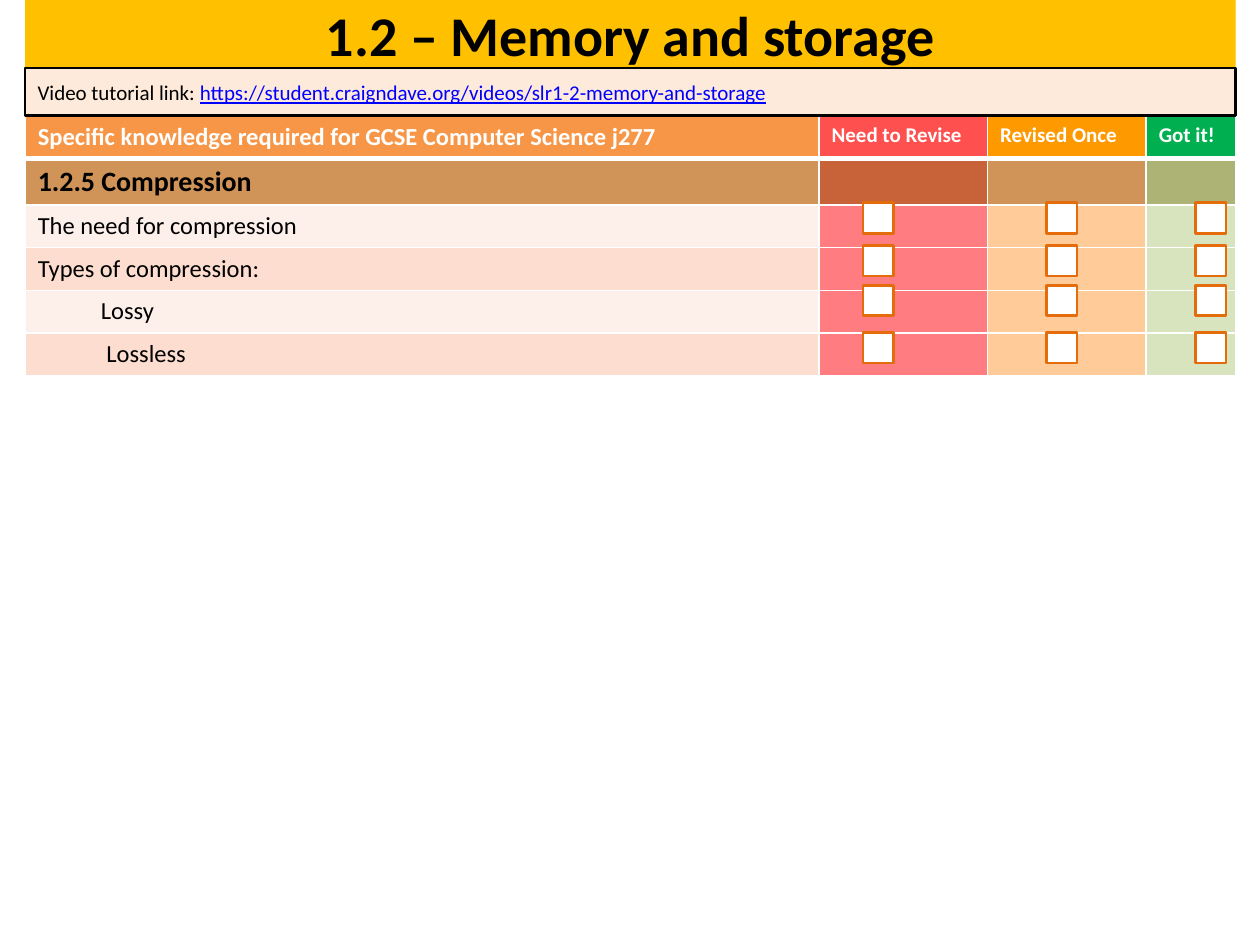
from dataclasses import dataclass

from lxml import etree
from pptx import Presentation
from pptx.dml.color import RGBColor
from pptx.enum import shapes, text
from pptx.oxml import ns
from pptx.util import Pt

WHITE = RGBColor(0xFF, 0xFF, 0xFF)
BLACK = RGBColor(0x00, 0x00, 0x00)
GOLD = RGBColor(0xFF, 0xC0, 0x00)
CREAM = RGBColor(0xFD, 0xEA, 0xDA)
LINK_BLUE = RGBColor(0x00, 0x00, 0xFF)
BOX_ORANGE = RGBColor(0xE4, 0x6C, 0x0A)
HEAD_ORANGE = RGBColor(0xF7, 0x96, 0x46)
HEAD_RED = RGBColor(0xFF, 0x50, 0x50)
HEAD_AMBER = RGBColor(0xFF, 0x99, 0x00)
HEAD_GREEN = RGBColor(0x00, 0xB0, 0x50)
TAN = RGBColor(0xD0, 0x94, 0x58)
RUST = RGBColor(0xC7, 0x62, 0x39)
SAGE = RGBColor(0xAD, 0xB3, 0x75)
PINK_LIGHT = RGBColor(0xFD, 0xEF, 0xE9)
PINK = RGBColor(0xFC, 0xDD, 0xCF)
RED = RGBColor(0xFF, 0x7C, 0x80)
AMBER = RGBColor(0xFF, 0xCC, 0x99)
GREEN = RGBColor(0xD7, 0xE4, 0xBD)

FONT = "Calibri"
LEFT, WIDTH = 14.4, 691.7
TABLE_TOP = 66.2
COLUMN_WIDTHS = (453.6, 96.3, 90.7, 51.1)
BOX_SIZE = 17.4
BOX_LEFTS = (493.2, 598, 683.2)
BOX_TOPS = (115.9, 140.4, 163, 190)


@dataclass(frozen=True)
class Row:
    labels: tuple[str, ...]
    fills: tuple[RGBColor, ...]
    height: float = 24.3
    sizes: tuple[float, ...] = (14, 12, 12, 12)
    color: RGBColor = BLACK
    bold: bool = False
    indent: float = 0
    rule: float = 1


RATINGS = (RED, AMBER, GREEN)
ROWS = (
    Row(("Specific knowledge required for GCSE Computer Science j277",
         "Need to Revise", "Revised Once", "Got it!"),
        (HEAD_ORANGE, HEAD_RED, HEAD_AMBER, HEAD_GREEN),
        color=WHITE, bold=True, rule=3),
    Row(("1.2.5 Compression", "", "", ""), (TAN, RUST, TAN, SAGE),
        height=26.7, sizes=(16, 12, 12, 12), bold=True),
    Row(("The need for compression", "", "", ""), (PINK_LIGHT, *RATINGS)),
    Row(("Types of compression:", "", "", ""), (PINK, *RATINGS)),
    Row(("Lossy", "", "", ""), (PINK_LIGHT, *RATINGS), indent=36),
    Row(("Lossless", "", "", ""), (PINK, *RATINGS), indent=39.2),
)


def add_text(p, content: str, *, size: float, color: RGBColor = BLACK,
             bold: bool = False, underline: bool = False) -> None:
    r = p.add_run()
    r.text = content
    r.font.name = FONT
    r.font.size = Pt(size)
    r.font.color.rgb = color
    r.font.bold = bold
    r.font.underline = underline


def add_box(s, left: float, top: float, width: float, height: float,
            fill: RGBColor, line: RGBColor | None = None):
    sp = s.shapes.add_shape(shapes.MSO_SHAPE.RECTANGLE,
                            Pt(left), Pt(top), Pt(width), Pt(height))
    sp.shadow.inherit = False
    sp.fill.solid()
    sp.fill.fore_color.rgb = fill
    if line is None:
        sp.line.fill.background()
    else:
        sp.line.color.rgb = line
        sp.line.width = Pt(1.5)
    tf = sp.text_frame
    tf.word_wrap = True
    tf.vertical_anchor = text.MSO_ANCHOR.MIDDLE
    tf.margin_top = tf.margin_bottom = 0
    return sp


def set_borders(cell, top: float, bottom: float) -> None:
    tc_pr = cell._tc.get_or_add_tcPr()
    widths = {"a:lnL": 1, "a:lnR": 1, "a:lnT": top, "a:lnB": bottom}
    for index, (tag, width) in enumerate(widths.items()):
        ln = etree.Element(ns.qn(tag), w=str(Pt(width)))
        fill = etree.SubElement(ln, ns.qn("a:solidFill"))
        etree.SubElement(fill, ns.qn("a:srgbClr"), val=str(WHITE))
        tc_pr.insert(index, ln)


def fill_cell(cell, row: Row, column: int, top_rule: float) -> None:
    cell.fill.solid()
    cell.fill.fore_color.rgb = row.fills[column]
    set_borders(cell, top_rule, row.rule)
    p = cell.text_frame.paragraphs[0]
    if row.labels[column]:
        if column == 0 and row.indent:
            p_pr = p._p.get_or_add_pPr()
            p_pr.set("marL", str(Pt(row.indent)))
            p_pr.set("lvl", "1")
        add_text(p, row.labels[column], size=row.sizes[column],
                 color=row.color, bold=row.bold)
    else:
        etree.SubElement(p._p, ns.qn("a:endParaRPr"),
                         sz=str(row.sizes[column] * 100))


def add_checklist(s) -> None:
    height = sum(row.height for row in ROWS)
    table = s.shapes.add_table(len(ROWS), len(COLUMN_WIDTHS), Pt(LEFT),
                               Pt(TABLE_TOP), Pt(WIDTH), Pt(height)).table
    for column, width in zip(table.columns, COLUMN_WIDTHS):
        column.width = Pt(width)
    top_rule = 1
    for i, row in enumerate(ROWS):
        table.rows[i].height = Pt(row.height)
        for j in range(len(COLUMN_WIDTHS)):
            fill_cell(table.cell(i, j), row, j, top_rule)
        top_rule = row.rule


def main() -> None:
    prs = Presentation()
    prs.slide_width, prs.slide_height = Pt(720), Pt(540)
    s = prs.slides.add_slide(prs.slide_layouts[6])

    title = add_box(s, LEFT, 0, WIDTH, 38.9, GOLD)
    p = title.text_frame.paragraphs[0]
    p.alignment = text.PP_ALIGN.CENTER
    add_text(p, "1.2 – Memory and storage", size=32, bold=True)

    add_checklist(s)
    for top in BOX_TOPS:
        for left in BOX_LEFTS:
            add_box(s, left, top, BOX_SIZE, BOX_SIZE, WHITE, BOX_ORANGE)

    video = add_box(s, LEFT, 38.9, WIDTH, 27.3, CREAM, BLACK)
    p = video.text_frame.paragraphs[0]
    p.alignment = text.PP_ALIGN.LEFT
    add_text(p, "Video tutorial link: ", size=12)
    add_text(p, "https://student.craigndave.org/videos/slr1-2-memory-and-storage",
             size=12, color=LINK_BLUE, underline=True)

    prs.save("out.pptx")


if __name__ == "__main__":
    main()
